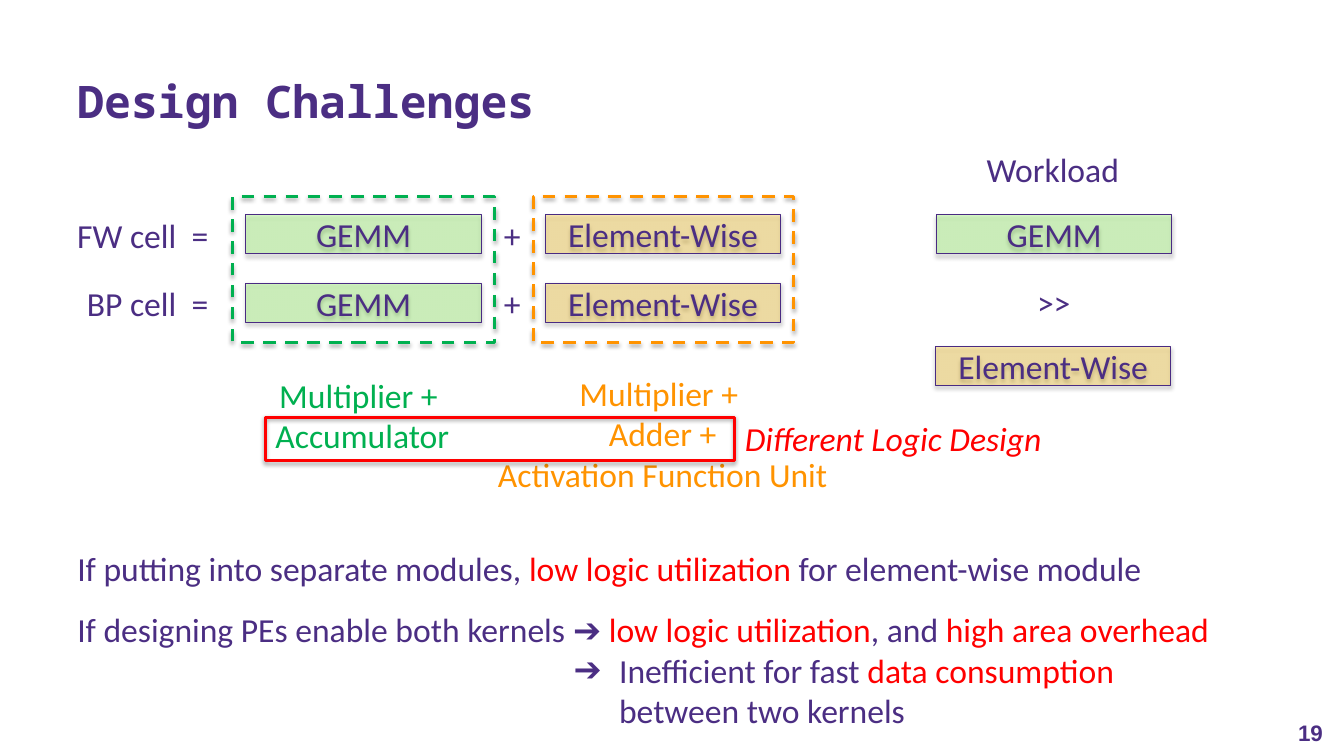
from dataclasses import dataclass

from lxml import etree
from pptx import Presentation
from pptx.dml.color import RGBColor
from pptx.enum.dml import MSO_LINE
from pptx.enum.shapes import MSO_SHAPE
from pptx.enum.text import MSO_ANCHOR, MSO_AUTO_SIZE, PP_ALIGN
from pptx.oxml.ns import qn
from pptx.util import Pt

LEFT, CENTER, RIGHT = PP_ALIGN.LEFT, PP_ALIGN.CENTER, PP_ALIGN.RIGHT
TOP, MIDDLE, BOTTOM = MSO_ANCHOR.TOP, MSO_ANCHOR.MIDDLE, MSO_ANCHOR.BOTTOM
RECTANGLE, DASH, NO_FIT = MSO_SHAPE.RECTANGLE, MSO_LINE.DASH, MSO_AUTO_SIZE.NONE


@dataclass(frozen=True)
class Theme:
    ink: str = "4B2E83"
    outline: str = "492B82"
    gemm: str = "8DFF55"
    element: str = "FFC208"
    green: str = "00B050"
    orange: str = "FF9300"
    red: str = "FF0000"
    body_font: str = "Calibri"
    title_font: str = "Noto Sans Mono"
    number_font: str = "Arial"
    title_size: int = 32
    body_size: int = 24
    number_size: int = 16


THEME = Theme()
BLOCK_WIDTH, BLOCK_HEIGHT = 168, 28
LINE_HEIGHT = 36
INSET = 7.2
BLOCKS = {"GEMM": THEME.gemm, "Element-Wise": THEME.element}


def set_font(font, color=THEME.ink, size=THEME.body_size, name=THEME.body_font,
             bold=False, italic=False):
    font.name, font.size, font.bold, font.italic = name, Pt(size), bold, italic
    font.color.rgb = RGBColor.from_string(color)


def add_text(slide, box, lines, align=LEFT, tab=None, **style):
    shape = slide.shapes.add_textbox(*map(Pt, box))
    frame = shape.text_frame
    frame.word_wrap = True
    frame.text = "\n".join(lines)
    for paragraph in frame.paragraphs:
        paragraph.alignment = align
        if tab:
            properties = paragraph._p.get_or_add_pPr()
            stops = etree.SubElement(properties, qn("a:tabLst"))
            etree.SubElement(stops, qn("a:tab"), pos=str(Pt(tab)), algn="l")
        set_font(paragraph.font, **style)


def add_rectangle(slide, box, line_color, line_width):
    shape = slide.shapes.add_shape(RECTANGLE, *map(Pt, box))
    shape.fill.background()
    shape.line.color.rgb = RGBColor.from_string(line_color)
    shape.line.width = Pt(line_width)
    shape.shadow.inherit = False
    effects = shape._element.spPr.find(qn("a:effectLst"))
    shadow = etree.SubElement(effects, qn("a:outerShdw"), blurRad=str(Pt(3.1)),
                              dist=str(Pt(1.8)), dir="5400000", rotWithShape="0")
    color = etree.SubElement(shadow, qn("a:srgbClr"), val="000000")
    etree.SubElement(color, qn("a:alpha"), val="35000")
    return shape


def add_block(slide, left, top, label):
    shape = add_rectangle(slide, (left, top, BLOCK_WIDTH, BLOCK_HEIGHT), THEME.outline, 0.75)
    shape.fill.solid()
    shape.fill.fore_color.rgb = RGBColor.from_string(BLOCKS[label])
    color = shape._element.spPr.find(qn("a:solidFill")).find(qn("a:srgbClr"))
    etree.SubElement(color, qn("a:alpha"), val="30000")
    frame = shape.text_frame
    frame.text = label
    frame.vertical_anchor = MIDDLE
    paragraph = frame.paragraphs[0]
    paragraph.alignment = CENTER
    set_font(paragraph.font)


def add_title(slide, box):
    title = slide.shapes.title
    title.left, title.top, title.width, title.height = map(Pt, box)
    frame = title.text_frame
    frame.text = "Design Challenges"
    frame.vertical_anchor = BOTTOM
    frame.auto_size = NO_FIT
    paragraph = frame.paragraphs[0]
    paragraph.alignment = LEFT
    set_font(paragraph.font, size=THEME.title_size, name=THEME.title_font, bold=True)


def add_cells(slide, left, top):
    equals_left = left + 89
    for row, (name, indent) in enumerate((("FW", 0), ("BP", 7))):
        block_top = top + 49 * row
        text_top = block_top - 3.6
        add_text(slide, (left + indent, text_top, 115 - indent, LINE_HEIGHT),
                 [f"{name} cell\t="], tab=equals_left - left - indent - INSET)
        add_block(slide, left + 127.7, block_top, "GEMM")
        add_text(slide, (left + 304.8, text_top, 30, LINE_HEIGHT), ["+"])
        add_block(slide, left + 341.5, block_top, "Element-Wise")


def add_units(slide, left, top):
    groups = (
        (0, 187, THEME.green, (14, 124, 157, 66), ["Multiplier + ", "Accumulator"]),
        (214.5, 186, THEME.orange, (175, 122.5, 264, 95),
         ["Multiplier + ", "Adder +", "Activation Function Unit"]),
    )
    for offset, width, color, (text_left, text_top, text_width, height), lines in groups:
        frame = add_rectangle(slide, (left + offset, top, width, 104), color, 2.25)
        frame.line.dash_style = DASH
        add_text(slide, (left + text_left, top + text_top, text_width, height),
                 lines, align=CENTER, color=color)


def add_workload(slide, left, top):
    add_text(slide, (left + 29.5, top, 116, LINE_HEIGHT), ["Workload"])
    add_block(slide, left + 0.8, top + 50.4, "GEMM")
    add_text(slide, (left + 65.5, top + 94.5, 45, LINE_HEIGHT), [">>"])
    add_block(slide, left, top + 144.5, "Element-Wise")


def add_logic_callout(slide, left, top):
    add_rectangle(slide, (left, top, 335, 31), THEME.red, 2.25)
    add_text(slide, (left + 335.5, top - 3, 240, LINE_HEIGHT),
             ["Different Logic Design"], color=THEME.red, italic=True)


def add_conclusions(slide, box):
    arrow_left, arrow_gap = 354.5, 32.5
    conclusions = (
        (0, None, (("If putting into separate modules, ", THEME.ink),
                   ("low logic utilization ", THEME.red),
                   ("for element-wise module", THEME.ink))),
        (15.3, None, (("If designing PEs enable both kernels ➔ ", THEME.ink),
                      ("low logic utilization", THEME.red),
                      (", and ", THEME.ink),
                      ("high area overhead", THEME.red))),
        (0, "➔", (("Inefficient for fast ", THEME.ink), ("data consumption", THEME.red))),
        (0, "", (("between two kernels", THEME.ink),)),
    )
    body = slide.placeholders[1]
    body.left, body.top, body.width, body.height = map(Pt, box)
    frame = body.text_frame
    frame.auto_size = NO_FIT
    frame.vertical_anchor = TOP
    for index, (space, bullet, runs) in enumerate(conclusions):
        paragraph = frame.add_paragraph() if index else frame.paragraphs[0]
        properties = paragraph._p.get_or_add_pPr()
        margin = 0 if bullet is None else arrow_left + arrow_gap
        properties.set("marL", str(Pt(margin)))
        properties.set("indent", str(Pt(-arrow_gap if bullet else 0)))
        if bullet:
            etree.SubElement(properties, qn("a:buChar"), char=bullet)
        else:
            etree.SubElement(properties, qn("a:buNone"))
        paragraph.space_before = Pt(space)
        set_font(paragraph.font)
        for text, color in runs:
            run = paragraph.add_run()
            run.text = text
            run.font.color.rgb = RGBColor.from_string(color)


def main():
    presentation = Presentation()
    presentation.slide_width, presentation.slide_height = Pt(960), Pt(540)
    slide = presentation.slides.add_slide(presentation.slide_layouts[1])
    add_title(slide, (48, 39.6, 859, 55.4))
    add_cells(slide, 48, 153.4)
    add_units(slide, 166.3, 140.4)
    add_workload(slide, 668.2, 103)
    add_conclusions(slide, (48, 387.4, 870, 145))
    add_logic_callout(slide, 189.4, 298)
    add_text(slide, (728, 509.8, 224, 30), ["19"], align=RIGHT, bold=True,
             size=THEME.number_size, name=THEME.number_font)
    presentation.save("out.pptx")


if __name__ == "__main__":
    main()
